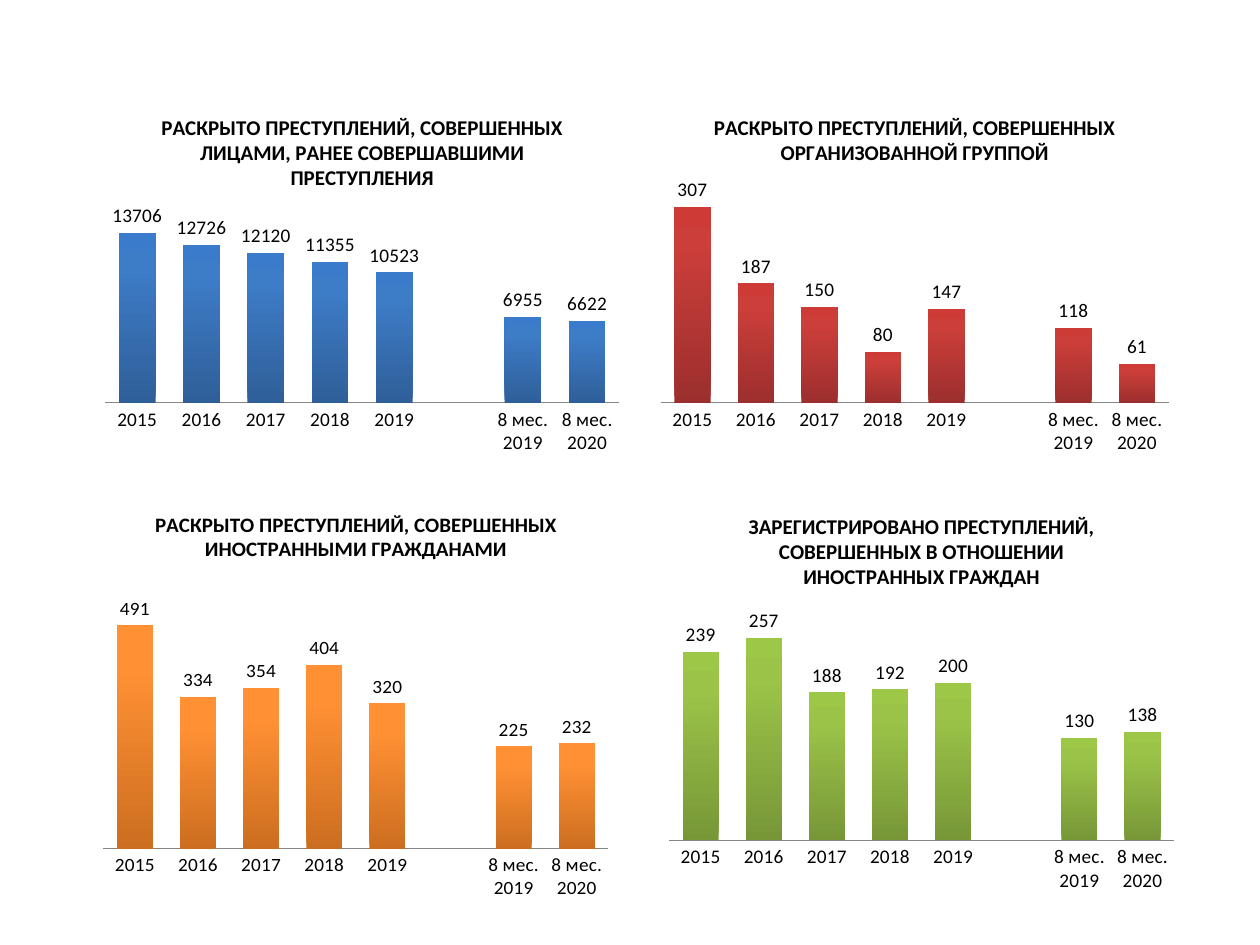
from copy import deepcopy
from dataclasses import dataclass

from lxml.etree import SubElement
from pptx import Presentation
from pptx.chart.data import CategoryChartData
from pptx.dml.color import RGBColor
from pptx.enum.chart import XL_CHART_TYPE, XL_LABEL_POSITION, XL_TICK_MARK
from pptx.oxml.ns import qn
from pptx.util import Inches, Pt


@dataclass(frozen=True)
class Theme:
    """Colours and type sizes; each gradient runs from bar foot to bar top."""
    font: str = "Calibri"
    text: str = "000000"
    axis: str = "868686"
    title_size: int = 12
    label_size: int = 11
    gradient_positions: tuple = (0, 0.8, 1)
    blue: tuple = ("2F5F99", "3D7CC7", "3A7CCB")
    red: tuple = ("9C2F2D", "CB3E3A", "CE3B37")
    orange: tuple = ("CC6E20", "FF9034", "FF9136")
    green: tuple = ("779737", "9BC348", "9DC746")


@dataclass(frozen=True)
class Panel:
    """One crime chart: box in inches, optional plot top and height as fractions."""
    box: tuple
    title: str
    counts: tuple
    gradient: tuple
    plot_span: tuple = None


THEME = Theme()
GAP_WIDTH = 75
PLOT_WIDTH = 0.93
FULL_YEARS = [str(year) for year in range(2015, 2020)]
EIGHT_MONTHS = [f"8 мес. {year}" for year in (2019, 2020)]
PERIODS = FULL_YEARS + [""] + EIGHT_MONTHS

LEFT, RIGHT = 0.75, 5.16
TOP, BOTTOM = 0.76, 3.91
PANELS = [
    Panel(
        box=(LEFT, TOP, 4.25, 2.91),
        title="РАСКРЫТО ПРЕСТУПЛЕНИЙ, СОВЕРШЕННЫХ ЛИЦАМИ, РАНЕЕ СОВЕРШАВШИМИ ПРЕСТУПЛЕНИЯ",
        counts=(13706, 12726, 12120, 11355, 10523, None, 6955, 6622),
        gradient=THEME.blue,
    ),
    Panel(
        box=(RIGHT, TOP, 4.2, 2.91),
        title="РАСКРЫТО ПРЕСТУПЛЕНИЙ, СОВЕРШЕННЫХ ОРГАНИЗОВАННОЙ ГРУППОЙ",
        counts=(307, 187, 150, 80, 147, None, 118, 61),
        gradient=THEME.red,
    ),
    Panel(
        box=(LEFT - 0.08, BOTTOM, 4.31, 3.23),
        title="РАСКРЫТО ПРЕСТУПЛЕНИЙ, СОВЕРШЕННЫХ ИНОСТРАННЫМИ ГРАЖДАНАМИ",
        counts=(491, 334, 354, 404, 320, None, 225, 232),
        gradient=THEME.orange,
        plot_span=(0.21, 0.69),
    ),
    Panel(
        box=(RIGHT, BOTTOM, 4.31, 3.54),
        title="ЗАРЕГИСТРИРОВАНО ПРЕСТУПЛЕНИЙ, СОВЕРШЕННЫХ В ОТНОШЕНИИ ИНОСТРАННЫХ ГРАЖДАН",
        counts=(239, 257, 188, 192, 200, None, 130, 138),
        gradient=THEME.green,
        plot_span=(0.25, 0.53),
    ),
]


def style_font(font, size, bold=False):
    """Apply the theme's typeface and text colour."""
    font.name = THEME.font
    font.size = Pt(size)
    font.bold = bold
    font.color.rgb = RGBColor.from_string(THEME.text)


def format_title(chart, title):
    """Write the chart title above the plot."""
    chart.has_title = True
    chart.chart_title.include_in_layout = False
    heading = chart.chart_title.text_frame
    heading.text = title
    for run in heading.paragraphs[0].runs:
        style_font(run.font, THEME.title_size, bold=True)


def format_axes(chart):
    """Show only the period axis, without ticks or gridlines."""
    count_axis = chart.value_axis
    count_axis.visible = False
    count_axis.has_major_gridlines = False
    count_axis.minimum_scale = 0
    period_axis = chart.category_axis
    period_axis.major_tick_mark = XL_TICK_MARK.NONE
    period_axis.format.line.color.rgb = RGBColor.from_string(THEME.axis)
    style_font(period_axis.tick_labels.font, THEME.label_size)


def format_bars(chart, gradient):
    """Set bar spacing, count labels and the vertical gradient."""
    bars = chart.plots[0]
    bars.gap_width = GAP_WIDTH
    bars.vary_by_categories = False
    bars.has_data_labels = True
    labels = bars.data_labels
    labels.show_value = True
    labels.position = XL_LABEL_POSITION.OUTSIDE_END
    style_font(labels.font, THEME.label_size)

    fill = bars.series[0].format.fill
    fill.gradient()
    fill.gradient_angle = 90
    stop_list = chart.element.find(".//" + qn("a:gsLst"))
    stop_list.append(deepcopy(stop_list[-1]))
    for stop, position, shade in zip(
            fill.gradient_stops, THEME.gradient_positions, gradient):
        stop.position = position
        stop.color.rgb = RGBColor.from_string(shade)


def place_plot(chart, plot_span):
    """Centre the inner plot area and fix its top and height."""
    plot_top, plot_height = plot_span
    settings = {
        "layoutTarget": "inner", "xMode": "edge", "yMode": "edge",
        "x": round((1 - PLOT_WIDTH) / 2, 3), "y": plot_top,
        "w": PLOT_WIDTH, "h": plot_height,
    }
    plot_area = chart.element.find(".//" + qn("c:plotArea"))
    for default_layout in plot_area.findall(qn("c:layout")):
        plot_area.remove(default_layout)
    layout = SubElement(plot_area, qn("c:layout"))
    plot_area.insert(0, layout)
    manual_layout = SubElement(layout, qn("c:manualLayout"))
    for tag, setting in settings.items():
        SubElement(manual_layout, qn(f"c:{tag}")).set("val", str(setting))


def add_panel(slide, panel):
    """Draw one titled column chart in the panel's box."""
    crimes = CategoryChartData()
    crimes.categories = PERIODS
    crimes.add_series("Series 1", panel.counts)
    chart = slide.shapes.add_chart(
        XL_CHART_TYPE.COLUMN_CLUSTERED, *map(Inches, panel.box), crimes).chart
    style_font(chart.font, THEME.label_size)
    chart.has_legend = False
    format_title(chart, panel.title)
    format_axes(chart)
    format_bars(chart, panel.gradient)
    if panel.plot_span:
        place_plot(chart, panel.plot_span)


def main():
    """Build the slide of four crime charts and save it."""
    presentation = Presentation()
    presentation.slide_width = Inches(10)
    presentation.slide_height = Inches(7.5)
    slide = presentation.slides.add_slide(presentation.slide_layouts[6])
    for panel in PANELS:
        add_panel(slide, panel)
    presentation.save("out.pptx")


if __name__ == "__main__":
    main()
